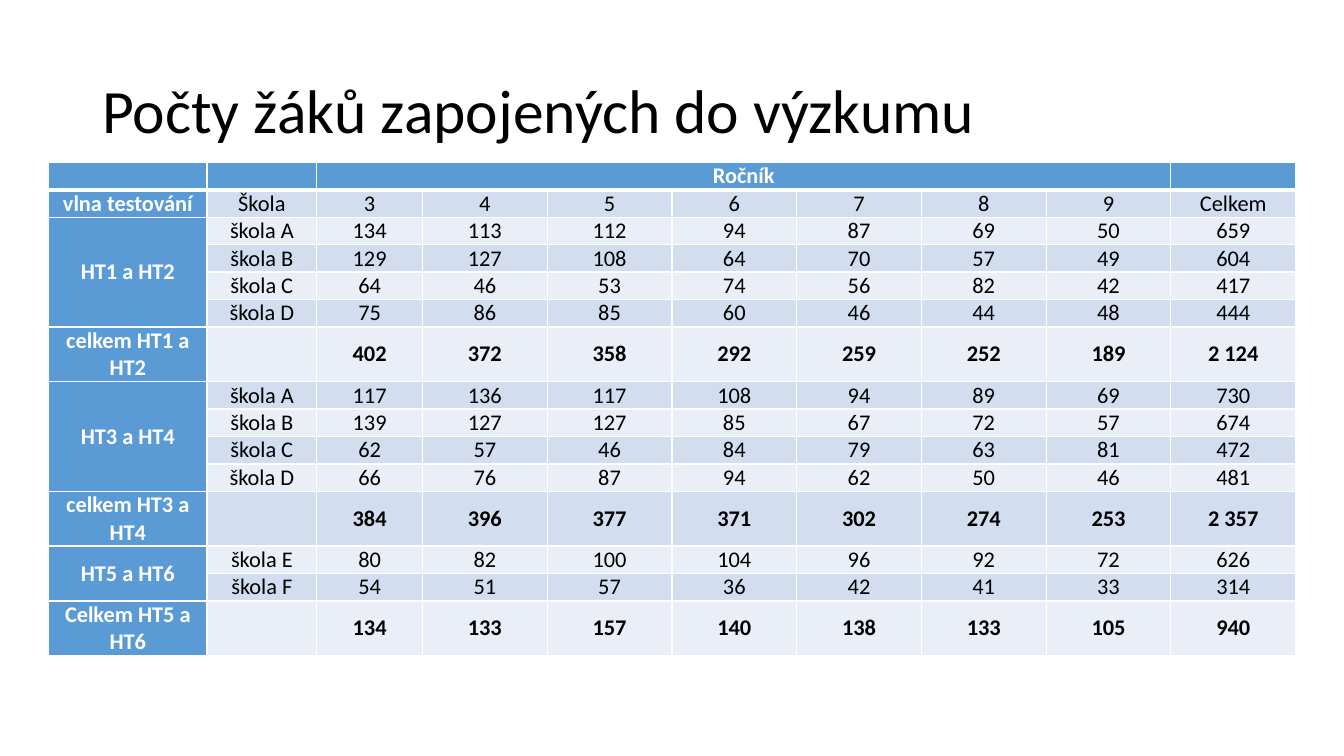
from dataclasses import dataclass

from lxml.etree import SubElement
from pptx import Presentation
from pptx.dml.color import RGBColor
from pptx.enum.text import MSO_ANCHOR as Anchor, PP_ALIGN as Align
from pptx.oxml.ns import qn
from pptx.table import Table, _Cell as Cell
from pptx.text.text import TextFrame
from pptx.util import Pt

FONT = "Calibri"
BLACK, WHITE = "000000", "FFFFFF"
HEADER_BLUE, BAND_DARK, BAND_LIGHT = "5B9BD5", "D2DEEF", "EAEFF7"
GRADES = range(3, 10)
COLUMN_WIDTHS = [113, 78.5, 75.5] + [89.1] * len(GRADES)
ROW_HEIGHT, TOTAL_HEIGHT = 19.6, 39.1


@dataclass(frozen=True)
class Wave:
    label: str
    total_label: str
    schools: dict[str, list[int]]  # pupils per grade


@dataclass(frozen=True)
class Row:
    texts: list[str]
    is_total: bool = False


WAVES = [
    Wave("HT1 a HT2", "celkem HT1 a HT2", {
        "škola A": [134, 113, 112, 94, 87, 69, 50],
        "škola B": [129, 127, 108, 64, 70, 57, 49],
        "škola C": [64, 46, 53, 74, 56, 82, 42],
        "škola D": [75, 86, 85, 60, 46, 44, 48],
    }),
    Wave("HT3 a HT4", "celkem HT3 a HT4", {
        "škola A": [117, 136, 117, 108, 94, 89, 69],
        "škola B": [139, 127, 127, 85, 67, 72, 57],
        "škola C": [62, 57, 46, 84, 79, 63, 81],
        "škola D": [66, 76, 87, 94, 62, 50, 46],
    }),
    Wave("HT5 a HT6", "Celkem HT5 a HT6", {
        "škola E": [80, 82, 100, 104, 96, 92, 72],
        "škola F": [54, 51, 57, 36, 42, 41, 33],
    }),
]


def color(value: str) -> RGBColor:
    return RGBColor.from_string(value)


def write_text(frame: TextFrame, text: str, *, size: float, fill: str = BLACK,
               bold: bool = False, align: Align = Align.LEFT,
               line_spacing: float = 1.0) -> None:
    paragraph = frame.paragraphs[0]
    paragraph.alignment = align
    paragraph.line_spacing = line_spacing
    if not text:  # an empty cell still needs the small size, or its row grows
        SubElement(paragraph._p, qn("a:endParaRPr"), sz=str(int(size * 100)))
        return
    run = paragraph.add_run()
    run.text = text
    run.font.name = FONT
    run.font.size = Pt(size)
    run.font.bold = bold
    run.font.color.rgb = color(fill)


def add_borders(cell: Cell, top: float, bottom: float) -> None:
    properties = cell._tc.get_or_add_tcPr()
    for side, width in (("L", 1), ("R", 1), ("T", top), ("B", bottom)):
        line = SubElement(properties, qn(f"a:ln{side}"), w=str(Pt(width)))
        SubElement(SubElement(line, qn("a:solidFill")), qn("a:srgbClr"), val=WHITE)


def with_sum(counts: list[int]) -> list[str]:
    return [f"{count:,}".replace(",", " ") for count in counts + [sum(counts)]]


def build_rows() -> list[Row]:
    rows = [
        Row(["", "", "Ročník"] + [""] * len(GRADES)),
        Row(["vlna testování", "Škola", *map(str, GRADES), "Celkem"]),
    ]
    for wave in WAVES:
        for index, (school, counts) in enumerate(wave.schools.items()):
            rows.append(Row([wave.label if index == 0 else "", school, *with_sum(counts)]))
        grade_totals = [sum(column) for column in zip(*wave.schools.values())]
        rows.append(Row([wave.total_label, "", *with_sum(grade_totals)], is_total=True))
    return rows


def fill_cell(cell: Cell, row: Row, row_index: int, column_index: int) -> None:
    is_header = row_index == 0 or column_index == 0
    band = BAND_DARK if row_index % 2 else BAND_LIGHT
    add_borders(cell, top=3 if row_index == 1 else 1, bottom=3 if row_index == 0 else 1)
    cell.fill.solid()
    cell.fill.fore_color.rgb = color(HEADER_BLUE if is_header else band)
    cell.vertical_anchor = Anchor.MIDDLE
    cell.margin_left = cell.margin_right = Pt(5)
    cell.margin_top = cell.margin_bottom = Pt(0)
    write_text(cell.text_frame, row.texts[column_index], size=16, align=Align.CENTER,
               fill=WHITE if is_header else BLACK, bold=is_header or row.is_total)


def merge_headers(table: Table) -> None:
    table.cell(0, 2).merge(table.cell(0, 1 + len(GRADES)))
    first = 2
    for wave in WAVES:
        last = first + len(wave.schools) - 1
        table.cell(first, 0).merge(table.cell(last, 0))
        first = last + 2


def main() -> None:
    presentation = Presentation()
    presentation.slide_width, presentation.slide_height = Pt(960), Pt(540)
    slide = presentation.slides.add_slide(presentation.slide_layouts[6])

    # Title
    title = slide.shapes.add_textbox(Pt(66), Pt(28.75), Pt(828), Pt(104.4)).text_frame
    title.word_wrap = True
    title.vertical_anchor = Anchor.MIDDLE
    write_text(title, "Počty žáků zapojených do výzkumu", size=44, line_spacing=0.9)

    # Table of pupil counts
    rows = build_rows()
    heights = [TOTAL_HEIGHT if row.is_total else ROW_HEIGHT for row in rows]
    table = slide.shapes.add_table(len(rows), len(COLUMN_WIDTHS), Pt(34.8), Pt(116),
                                   Pt(sum(COLUMN_WIDTHS)), Pt(sum(heights))).table
    for column, width in zip(table.columns, COLUMN_WIDTHS):
        column.width = Pt(width)
    for row_index, (row, height) in enumerate(zip(rows, heights)):
        table.rows[row_index].height = Pt(height)
        for column_index in range(len(COLUMN_WIDTHS)):
            fill_cell(table.cell(row_index, column_index), row, row_index, column_index)
    merge_headers(table)

    presentation.save("out.pptx")


if __name__ == "__main__":
    main()
